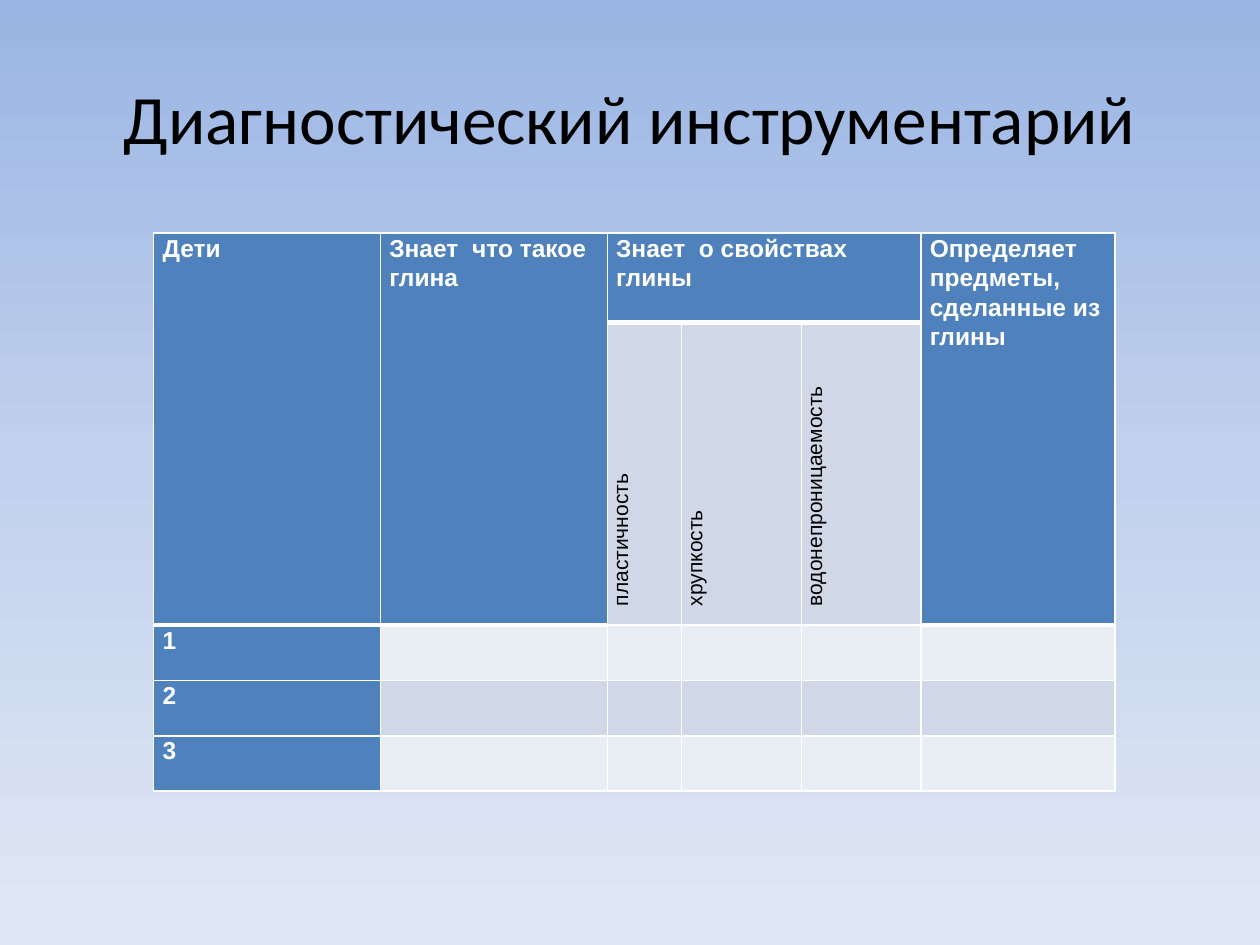
from copy import deepcopy

from lxml import etree
from pptx import Presentation
from pptx.dml.color import RGBColor
from pptx.enum import text
from pptx.oxml import ns
from pptx.util import Inches, Pt

COLORS = {
    "sky": "9AB5E4", "haze": "C2D1ED", "mist": "E1E8F5",
    "header": "4F81BD", "dark_band": "D0D8E8", "light_band": "E9EDF4",
    "white": "FFFFFF", "black": "000000",
}
COLUMN_WIDTHS = [1.8, 1.8, 0.59, 0.95, 0.95, 1.54]
ROW_HEIGHTS = [0.71, 2.4, 0.44, 0.44, 0.44]
HEADINGS = {
    0: "Дети",
    1: "Знает  что такое глина",
    2: "Знает  о свойствах глины",
    5: "Определяет предметы, сделанные из глины",
}
PROPERTIES = {2: "пластичность", 3: "хрупкость", 4: "водонепроницаемость"}
CHILDREN = {2: "1", 3: "2", 4: "3"}


def rgb(name):
    return RGBColor.from_string(COLORS[name])


def write(frame, content, size=14, font="Arial", color="white", bold=False,
          align=None, spacing=None):
    paragraph = frame.paragraphs[0]
    paragraph.alignment = align
    paragraph.line_spacing = spacing
    run = paragraph.add_run()
    run.text = content
    run.font.size = Pt(size)
    run.font.name = font
    run.font.bold = bold
    run.font.color.rgb = rgb(color)
    return paragraph


class DiagnosticSlide:
    """Holds the style and the current slide, and draws its elements."""

    def __init__(self, deck):
        self.slide = deck.slides.add_slide(deck.slide_layouts[6])

    def background(self, *colors):
        fill = self.slide.background.fill
        fill.gradient()
        fill.gradient_angle = 270
        stops = self.slide.element.find(".//" + ns.qn("a:gsLst"))
        stops.insert(1, deepcopy(stops[0]))
        for index, (stop, color) in enumerate(zip(fill.gradient_stops, colors)):
            stop.position = index / (len(colors) - 1)
            stop.color.rgb = rgb(color)

    def title(self, content):
        heading = self.slide.shapes.add_textbox(
            Inches(0.5), Inches(0.3), Inches(9), Inches(1.25)).text_frame
        heading.word_wrap = True
        heading.vertical_anchor = text.MSO_ANCHOR.MIDDLE
        write(heading, content, size=39.6, font="Calibri", color="black",
              align=text.PP_ALIGN.CENTER)

    def border(self, cell, top, bottom):
        properties = cell._tc.get_or_add_tcPr()
        for side, width in (("L", 1), ("R", 1), ("T", top), ("B", bottom)):
            line = etree.SubElement(properties, ns.qn(f"a:ln{side}"), w=str(Pt(width)))
            solid = etree.SubElement(line, ns.qn("a:solidFill"))
            etree.SubElement(solid, ns.qn("a:srgbClr"), val=COLORS["white"])

    def cell(self, cell, row, column):
        last_header_row = 0 if column in PROPERTIES else 1
        is_header = row <= last_header_row
        self.border(cell, top=3 if row == last_header_row + 1 else 1,
                    bottom=3 if is_header else 1)
        band = "dark_band" if row % 2 else "light_band"
        cell.fill.solid()
        cell.fill.fore_color.rgb = rgb("header" if is_header or column == 0 else band)
        cell.margin_left = cell.margin_right = Inches(0.07)
        cell.margin_top = cell.margin_bottom = 0

    def table(self):
        grid = self.slide.shapes.add_table(
            len(ROW_HEIGHTS), len(COLUMN_WIDTHS), Inches(1.22), Inches(1.85),
            Inches(sum(COLUMN_WIDTHS)), Inches(sum(ROW_HEIGHTS))).table
        for column, width in zip(grid.columns, COLUMN_WIDTHS):
            column.width = Inches(width)
        for row, height in zip(grid.rows, ROW_HEIGHTS):
            row.height = Inches(height)
        for row in range(len(ROW_HEIGHTS)):
            for column in range(len(COLUMN_WIDTHS)):
                self.cell(grid.cell(row, column), row, column)

        for column, heading in HEADINGS.items():
            end = (0, max(PROPERTIES)) if column in PROPERTIES else (1, column)
            grid.cell(0, column).merge(grid.cell(*end))
            write(grid.cell(0, column).text_frame, heading, bold=True, spacing=1.07)
        for column, name in PROPERTIES.items():
            label = grid.cell(1, column)
            label._tc.get_or_add_tcPr().set("vert", "vert270")
            paragraph = write(label.text_frame, name, size=12, color="black", spacing=1.07)
            paragraph._p.get_or_add_pPr().set("marL", str(Inches(0.08)))
        for row, number in CHILDREN.items():
            write(grid.cell(row, 0).text_frame, number, bold=True, spacing=1.07)


def main():
    deck = Presentation()
    deck.slide_width, deck.slide_height = Inches(10), Inches(7.5)
    page = DiagnosticSlide(deck)
    page.background("sky", "haze", "mist")
    page.title("Диагностический инструментарий")
    page.table()
    deck.save("out.pptx")


if __name__ == "__main__":
    main()
